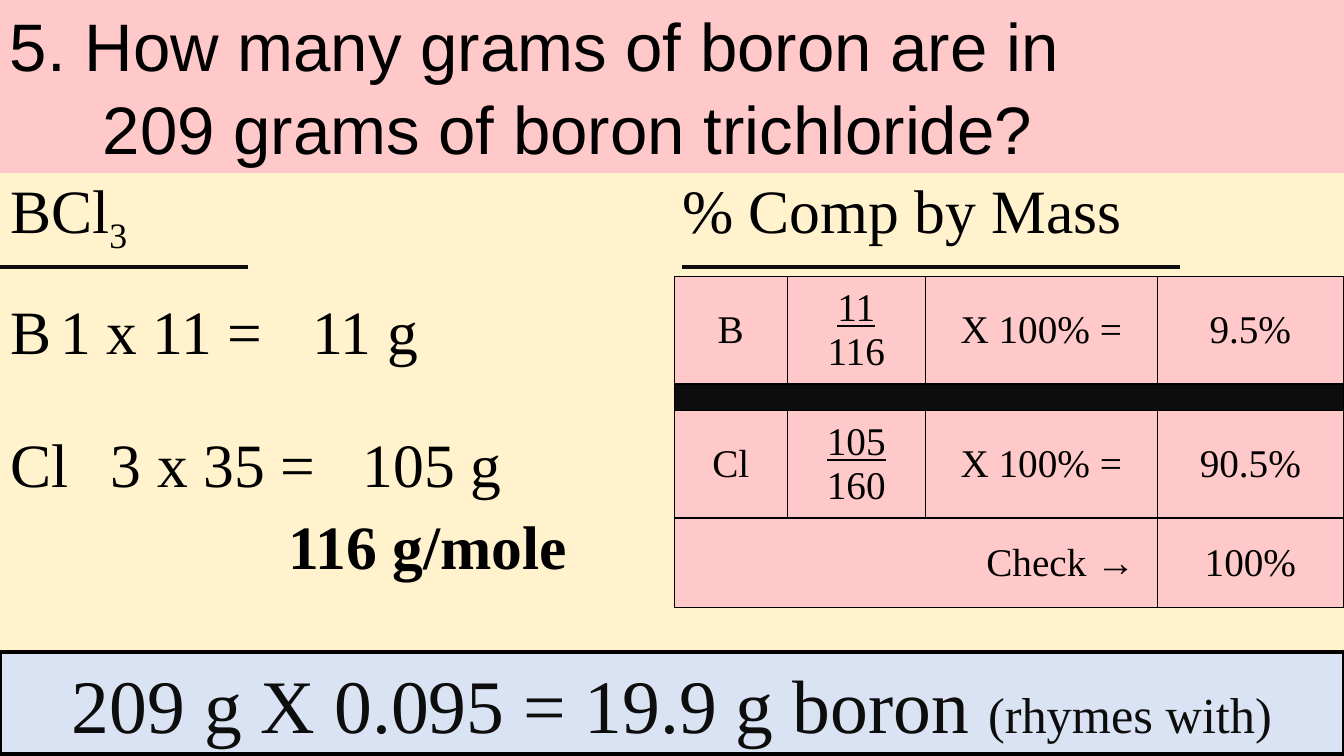
from dataclasses import dataclass, field

from lxml import etree
from pptx import Presentation
from pptx import util as u
from pptx.dml.color import RGBColor
from pptx.enum import shapes, text
from pptx.oxml import ns

PINK = RGBColor(0xFF, 0xC9, 0xC9)
CREAM = RGBColor(0xFF, 0xF2, 0xCC)
PALE_BLUE = RGBColor(0xDA, 0xE3, 0xF3)
INK = RGBColor(0x0D, 0x0D, 0x0D)
BLACK = RGBColor(0, 0, 0)
SERIF, SANS = "Times New Roman", "Arial"
COLUMNS, ROWS = 160, 90  # grid of twelfths of an inch
LEFT, CENTER, RIGHT = text.PP_ALIGN.LEFT, text.PP_ALIGN.CENTER, text.PP_ALIGN.RIGHT
TOP, MIDDLE = text.MSO_ANCHOR.TOP, text.MSO_ANCHOR.MIDDLE


def grid(units: float) -> u.Length:
    return u.Inches(units / 12)


@dataclass(frozen=True)
class Run:
    words: str
    size: float = 28
    font: str = SERIF
    color: RGBColor = BLACK
    extra: dict = field(default_factory=dict)
    baseline: int = 0


@dataclass(frozen=True)
class Line:
    runs: list[Run]
    align: text.PP_ALIGN = LEFT
    before: float = 0
    indent: float = 0
    hanging: float = 0
    tabs: tuple[float, ...] = ()


@dataclass(frozen=True)
class Rule:
    start: float
    end: float


@dataclass(frozen=True)
class Element:
    symbol: str
    mass: str
    total: str
    percent: str


def write_line(paragraph, line: Line) -> None:
    formats = {"alignment": line.align, "space_before": u.Pt(line.before)}
    for name, value in formats.items():
        setattr(paragraph, name, value)
    properties = paragraph._p.get_or_add_pPr()
    properties.set("marL", str(grid(line.indent)))
    properties.set("indent", str(-grid(line.hanging)))
    if line.tabs:
        stops = etree.SubElement(properties, ns.qn("a:tabLst"))
        for stop in line.tabs:
            etree.SubElement(stops, ns.qn("a:tab"), pos=str(grid(stop)), algn="l")
    for index, part in enumerate(line.runs):
        if index and line.hanging:
            paragraph.add_line_break()
        run = paragraph.add_run()
        run.text = part.words
        font_formats = {"size": u.Pt(part.size), "name": part.font, **part.extra}
        for name, value in font_formats.items():
            setattr(run.font, name, value)
        run.font.color.rgb = part.color
        if part.baseline:
            run.font._element.set("baseline", str(part.baseline * 1000))


def write_lines(frame, lines: list[Line]) -> None:
    for index, line in enumerate(lines):
        write_line(frame.add_paragraph() if index else frame.paragraphs[0], line)


def set_borders(cell, color: RGBColor | None) -> None:
    properties = cell._tc.get_or_add_tcPr()
    for side in ("lnL", "lnR", "lnT", "lnB"):
        edge = etree.SubElement(properties, ns.qn(f"a:{side}"), w=str(u.Pt(1)))
        if color is None:
            etree.SubElement(edge, ns.qn("a:noFill"))
        else:
            fill = etree.SubElement(edge, ns.qn("a:solidFill"))
            etree.SubElement(fill, ns.qn("a:srgbClr"), val=str(color))


def add_plain_table(slide, left: float, top: float, widths: list[float],
                    heights: list[float], fill: RGBColor, border: RGBColor | None,
                    anchor: text.MSO_ANCHOR):
    """Add a table whose cells share one fill, border and anchor."""
    table = slide.shapes.add_table(
        len(heights), len(widths), grid(left), grid(top),
        grid(sum(widths)), grid(sum(heights))).table
    table.first_row = table.horz_banding = False
    for column, width in zip(table.columns, widths):
        column.width = grid(width)
    for row, height in zip(table.rows, heights):
        row.height = grid(height)
    for cell in table.iter_cells():
        set_borders(cell, border)
        cell.fill.solid()
        cell.fill.fore_color.rgb = fill
        cell.vertical_anchor = anchor
    return table


def add_rule(slide, rule: Rule) -> None:
    height = grid(31.8)
    line = slide.shapes.add_connector(
        shapes.MSO_CONNECTOR.STRAIGHT, grid(rule.start), height, grid(rule.end), height)
    line.line.color.rgb = INK
    line.line.width = u.Pt(3)
    etree.SubElement(line._element.spPr, ns.qn("a:effectLst"))


def add_question(slide) -> None:
    frame = slide.shapes.add_textbox(0, 0, grid(COLUMNS), grid(20.64)).text_frame
    frame.word_wrap = True
    frame.vertical_anchor = text.MSO_ANCHOR.BOTTOM
    words = ("5. How many grams of boron are in", "209 grams of boron trichloride?")
    write_lines(frame, [Line([Run(part, 48, SANS) for part in words],
                             indent=11.04, hanging=11.04)])
    frame.paragraphs[0].line_spacing = 1.04


def add_workings(slide) -> None:
    table = add_plain_table(slide, 0, 20.64, [COLUMNS / 2] * 2, [57.24], CREAM, None, TOP)
    write_lines(table.cell(0, 0).text_frame, [
        Line([Run("BCl", 44), Run("3", 44, baseline=-25)]),
        Line([Run("B\t1 x 11 =\t11 g", 44)], before=31, tabs=(8.5, 36.3)),
        Line([Run("Cl\t3 x 35 =\t105 g", 44)], before=46, tabs=(10.4, 38.5)),
        Line([Run("116 g/mole", 44, extra={"bold": True})], before=10, indent=33.1),
    ])
    write_lines(table.cell(0, 1).text_frame, [Line([Run("% Comp by Mass", 44)])])


def add_composition(slide, elements: list[Element]) -> None:
    table = add_plain_table(slide, 80.28, 32.88, [13.44, 16.44, 27.6, 22.2],
                            [12.84, 3.12, 12.84, 10.68], PINK, BLACK, MIDDLE)
    for index, element in enumerate(elements):
        fraction = [Run(element.mass, extra={"underline": True}), Run(element.total)]
        row = [[Run(element.symbol)], fraction, [Run("X 100% =")], [Run(element.percent)]]
        for column, parts in enumerate(row):
            write_lines(table.cell(2 * index, column).text_frame,
                        [Line([part], CENTER) for part in parts])
    for column in range(4):
        divider = table.cell(1, column)
        divider.fill.fore_color.rgb = INK
        divider.margin_top = divider.margin_bottom = 0
        etree.SubElement(divider.text_frame.paragraphs[0]._p,
                         ns.qn("a:endParaRPr"), sz="800")
    table.cell(1, 0).merge(table.cell(1, 3))
    check = table.cell(3, 0)
    check.merge(table.cell(3, 2))
    check.margin_right = grid(2.6)
    write_lines(check.text_frame, [Line([Run("Check →")], RIGHT)])
    write_lines(table.cell(3, 3).text_frame, [Line([Run("100%")], CENTER)])


def add_answer(slide) -> None:
    answer = slide.shapes.add_shape(
        shapes.MSO_SHAPE.RECTANGLE, 0, grid(77.64), grid(COLUMNS), grid(12.12))
    answer.shadow.inherit = False
    answer.fill.solid()
    answer.fill.fore_color.rgb = PALE_BLUE
    answer.line.color.rgb = BLACK
    answer.line.width = u.Pt(3)
    answer.text_frame.word_wrap = True
    answer.text_frame.vertical_anchor = MIDDLE
    write_lines(answer.text_frame, [Line([
        Run("209 g X 0.095 = 19.9 g boron ", 54, color=INK),
        Run("(rhymes with)", 36, color=INK)], CENTER)])


def main() -> None:
    deck = Presentation()
    deck.slide_width, deck.slide_height = grid(COLUMNS), grid(ROWS)
    slide = deck.slides.add_slide(deck.slide_layouts[6])
    slide.background.fill.solid()
    slide.background.fill.fore_color.rgb = PINK
    add_question(slide)
    add_workings(slide)
    add_composition(slide, [Element("B", "11", "116", "9.5%"),
                            Element("Cl", "105", "160", "90.5%")])
    add_answer(slide)
    for rule in (Rule(0, 29.52), Rule(81.24, 140.52)):
        add_rule(slide, rule)
    deck.save("out.pptx")


if __name__ == "__main__":
    main()
